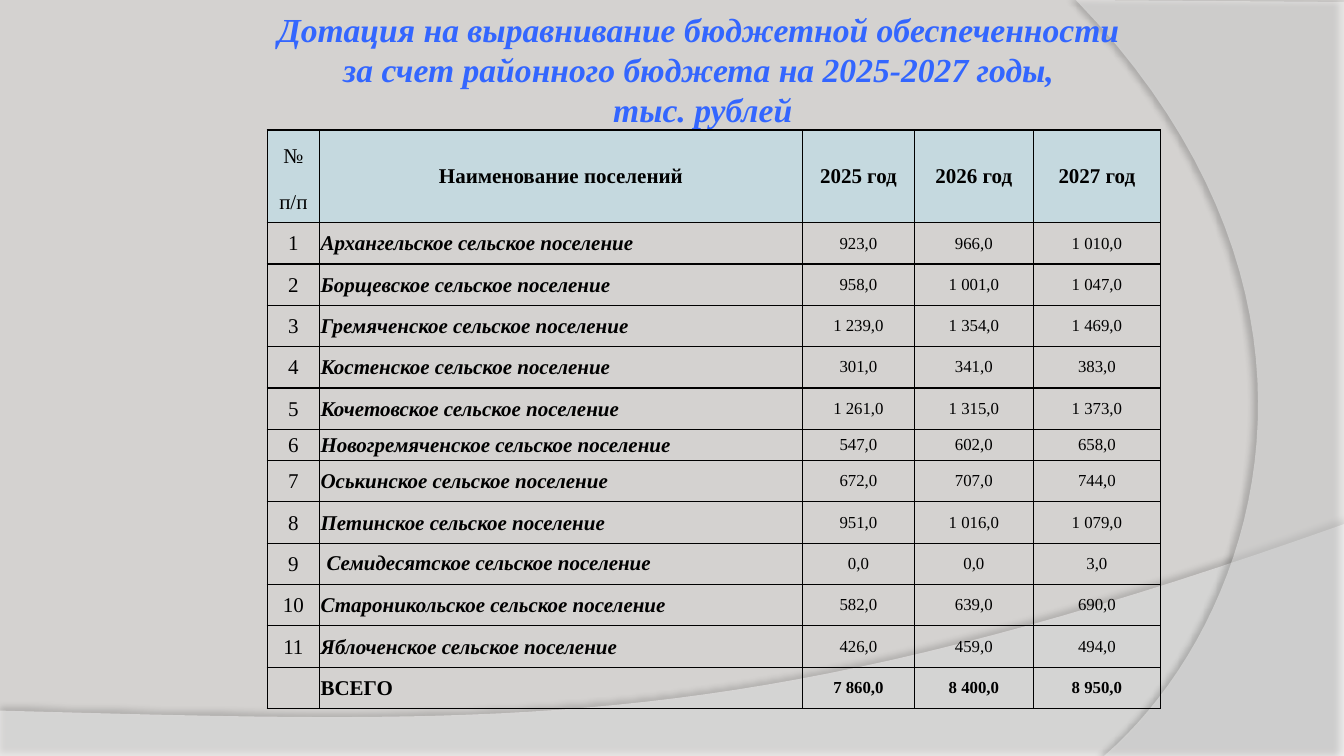
import pptx
import pptx.dml.color
import pptx.enum.text
import pptx.oxml
import pptx.oxml.ns
import pptx.util
from pptx.dml.color import RGBColor
from pptx.util import Inches

BACKGROUND = RGBColor(0xD4, 0xD2, 0xD0)
WHITE = RGBColor(0xFF, 0xFF, 0xFF)
BLACK = RGBColor(0x00, 0x00, 0x00)
TITLE_BLUE = RGBColor(0x33, 0x66, 0xFF)
HEADER_FILL = RGBColor(0xC5, 0xD9, 0xDF)
FONT = "Times New Roman"
ALIGN = pptx.enum.text.PP_ALIGN
MIDDLE = pptx.enum.text.MSO_ANCHOR.MIDDLE

TITLE_LINES = [
    "Дотация на выравнивание бюджетной обеспеченности ",
    "за счет районного бюджета на 2025-2027 годы, ",
    "тыс. рублей",
]
YEARS = ["2025 год", "2026 год", "2027 год"]
SETTLEMENTS = [
    ("Архангельское", "923,0", "966,0", "1 010,0"),
    ("Борщевское", "958,0", "1 001,0", "1 047,0"),
    ("Гремяченское", "1 239,0", "1 354,0", "1 469,0"),
    ("Костенское", "301,0", "341,0", "383,0"),
    ("Кочетовское", "1 261,0", "1 315,0", "1 373,0"),
    ("Новогремяченское", "547,0", "602,0", "658,0"),
    ("Оськинское", "672,0", "707,0", "744,0"),
    ("Петинское", "951,0", "1 016,0", "1 079,0"),
    ("Семидесятское", "0,0", "0,0", "3,0"),
    ("Староникольское", "582,0", "639,0", "690,0"),
    ("Яблоченское", "426,0", "459,0", "494,0"),
]
TOTALS = ["7 860,0", "8 400,0", "8 950,0"]
COLUMN_WIDTHS = [0.52, 4.79, 1.11, 1.18, 1.26]
ROW_HEIGHTS = [0.51] + [0.41] * 6 + [0.31] + [0.41] * 6
INDENTED_ROW = 10


def curve_points(start, control_1, control_2, end, steps=40):
    """Return points along a cubic Bezier curve."""
    points = []
    for step in range(steps + 1):
        t = step / steps
        weights = [(1 - t) ** 3, 3 * t * (1 - t) ** 2, 3 * t * t * (1 - t), t ** 3]
        points.append(tuple(
            sum(weight * value for weight, value in zip(weights, values))
            for values in zip(start, control_1, control_2, end)))
    return points


def add_wave(slide, left, top, corners, curve, opacity, shadow):
    """Draw a translucent wave with a soft shadow behind the title."""
    points = [(Inches(left + x), Inches(top + y))
              for x, y in corners + curve_points(*curve)]
    builder = slide.shapes.build_freeform(*points[0], scale=1.0)
    builder.add_line_segments(points[1:], close=True)
    shape = builder.convert_to_shape()
    shape.fill.solid()
    shape.fill.fore_color.rgb = WHITE
    shape.line.fill.background()
    shape.shadow.inherit = False
    properties = shape._element.spPr
    color = properties.find(pptx.oxml.ns.qn("a:solidFill"))[0]
    namespace = pptx.oxml.ns.nsdecls("a")
    color.append(pptx.oxml.parse_xml(f'<a:alpha {namespace} val="{opacity * 1000}"/>'))
    shadow_opacity, blur, distance, angle = shadow
    properties.find(pptx.oxml.ns.qn("a:effectLst")).append(pptx.oxml.parse_xml(
        f'<a:outerShdw {namespace} blurRad="{pptx.util.Pt(blur)}" '
        f'dist="{pptx.util.Pt(distance)}" dir="{angle * 60000}" rotWithShape="0">'
        f'<a:srgbClr val="{BLACK}"><a:alpha val="{shadow_opacity * 1000}"/>'
        '</a:srgbClr></a:outerShdw>'))
    slide.shapes.title._element.addprevious(shape._element)


def add_background(slide):
    """Fill the background and draw its two waves."""
    slide.background.fill.solid()
    slide.background.fill.fore_color.rgb = BACKGROUND
    add_wave(slide, 0, 5.2, [(0, 1.85), (0, 2.3), (13.33, 2.3)],
             [(13.33, 0), (7.45, 2.09), (5.21, 1.99), (0, 1.85)],
             45, (35, 4, 3.5, 270))
    add_wave(slide, 10.67, 0, [(2.66, 0.02), (2.66, 7.5)],
             [(0.28, 7.5), (1.79, 6.19), (2.9, 3), (0, 0)],
             40, (45, 4, 4, 180))


def add_title(slide, left, top, width, height):
    """Place and format the three-line title."""
    title = slide.shapes.title
    title.left, title.top = Inches(left), Inches(top)
    title.width, title.height = Inches(width), Inches(height)
    frame = title.text_frame
    frame.word_wrap = True
    frame.auto_size = pptx.enum.text.MSO_AUTO_SIZE.NONE
    frame.vertical_anchor = MIDDLE
    frame.margin_left = frame.margin_right = Inches(0.05)
    frame.margin_top = frame.margin_bottom = Inches(0.05)
    paragraph = frame.paragraphs[0]
    paragraph.text = "\v".join(TITLE_LINES)
    paragraph.alignment = ALIGN.CENTER
    font = paragraph.font
    font.name, font.size = FONT, pptx.util.Pt(24)
    font.bold = font.italic = True
    font.color.rgb = TITLE_BLUE


def add_borders(cell, sides):
    """Draw black one-point lines on the given sides of a cell."""
    properties = cell._tc.get_or_add_tcPr()
    for side in "LRTB":
        visible = side in sides
        fill = (f'<a:solidFill><a:srgbClr val="{BLACK}"/></a:solidFill>'
                if visible else '<a:noFill/>')
        properties.append(pptx.oxml.parse_xml(
            f'<a:ln{side} {pptx.oxml.ns.nsdecls("a")} '
            f'w="{pptx.util.Pt(1)}">{fill}</a:ln{side}>'))


def format_cell(cell, row, column, text):
    """Write one table cell and style it by its row and column."""
    header = row < 2
    total = row == len(ROW_HEIGHTS) - 1
    value = column > 1 and not header
    name = column == 1 and not header
    indented = value or (name and row == INDENTED_ROW)
    sides = {0: "LRT", 1: "LRB"}.get(row, "LRTB") if header else "LRTB"
    add_borders(cell, sides)
    if header:
        cell.fill.solid()
        cell.fill.fore_color.rgb = HEADER_FILL
    else:
        cell.fill.background()
    cell.vertical_anchor = MIDDLE
    cell.margin_left = cell.margin_right = Inches(0.07 if indented else 0.01)
    cell.margin_top = Inches(0 if indented else 0.01)
    cell.margin_bottom = 0
    paragraph = cell.text_frame.paragraphs[0]
    paragraph.text = text
    paragraph.alignment = ALIGN.LEFT if name else ALIGN.CENTER
    font = paragraph.font
    font.name, font.size = FONT, pptx.util.Pt(12 if value else 15)
    font.bold = total or name or (header and column > 0)
    font.italic = name and not total
    font.color.rgb = BLACK


def add_subsidy_table(slide, left, top):
    """Build the table of subsidies by settlement and year."""
    rows = [["№", "Наименование поселений", *YEARS], ["п/п", "", "", "", ""]]
    rows += [[str(number), f"{name} сельское поселение", *values]
             for number, (name, *values) in enumerate(SETTLEMENTS, 1)]
    rows.append(["", "ВСЕГО", *TOTALS])
    frame = slide.shapes.add_table(
        len(rows), len(COLUMN_WIDTHS), Inches(left), Inches(top),
        Inches(sum(COLUMN_WIDTHS)), Inches(sum(ROW_HEIGHTS)))
    table = frame.table
    table.first_row = table.horz_banding = False
    for column, width in zip(table.columns, COLUMN_WIDTHS):
        column.width = Inches(width)
    for row, height in zip(table.rows, ROW_HEIGHTS):
        row.height = Inches(height)
    for row, texts in enumerate(rows):
        for column, text in enumerate(texts):
            format_cell(table.cell(row, column), row, column, text)
    for column in range(1, len(COLUMN_WIDTHS)):
        table.cell(0, column).merge(table.cell(1, column))
        add_merged_border(table.cell(0, column))


def add_merged_border(cell):
    """Give a merged header cell its bottom line."""
    properties = cell._tc.tcPr
    bottom = properties.find(pptx.oxml.ns.qn("a:lnB"))
    bottom[0].getparent().replace(bottom[0], pptx.oxml.parse_xml(
        f'<a:solidFill {pptx.oxml.ns.nsdecls("a")}>'
        f'<a:srgbClr val="{BLACK}"/></a:solidFill>'))


def main():
    """Create and save the presentation."""
    presentation = pptx.Presentation()
    presentation.slide_width = Inches(13.33)
    presentation.slide_height = Inches(7.5)
    slide = presentation.slides.add_slide(presentation.slide_layouts[5])
    add_background(slide)
    add_title(slide, 1.99, 0.18, 9.96, 1.01)
    add_subsidy_table(slide, 2.65, 1.29)
    presentation.save("out.pptx")


if __name__ == "__main__":
    main()
